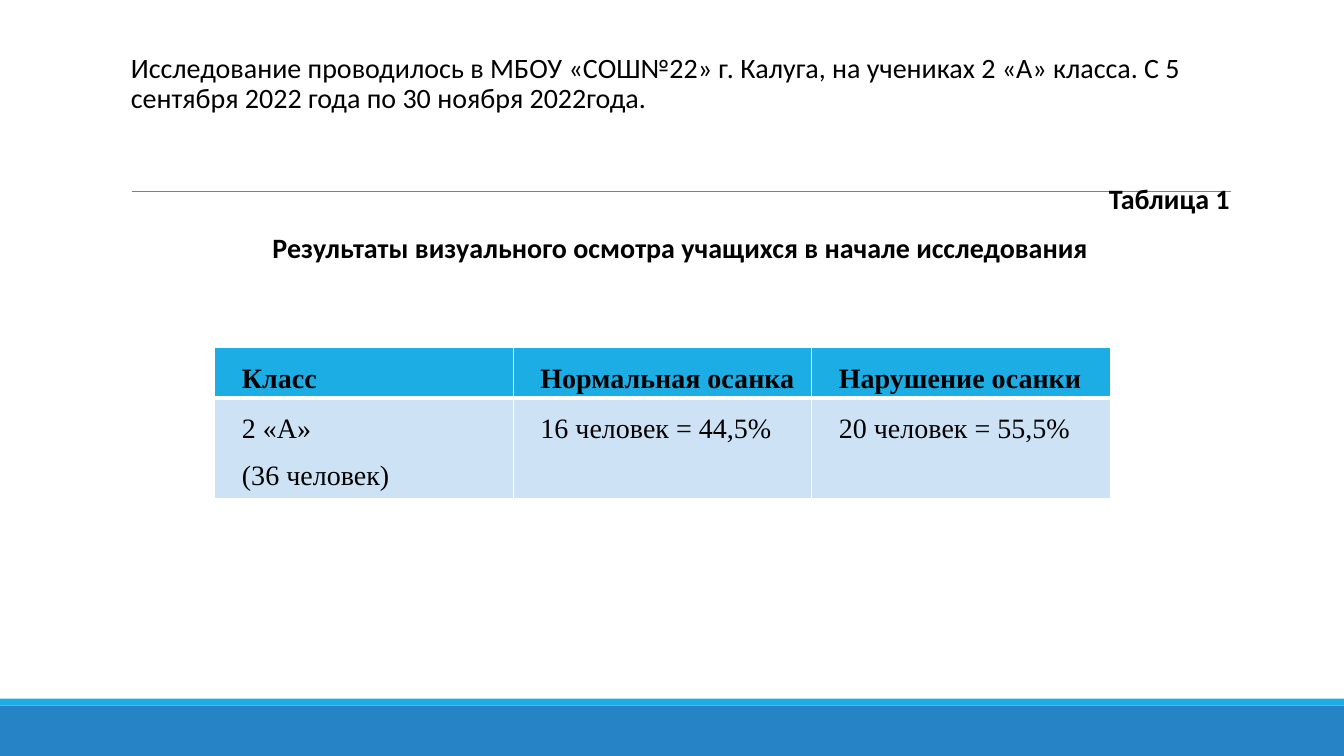
"""Build the slide with the results of the first posture examination."""
from lxml import etree
from pptx import Presentation
from pptx.dml.color import RGBColor
from pptx.enum.shapes import MSO_CONNECTOR, MSO_SHAPE
from pptx.enum.text import PP_ALIGN
from pptx.oxml.ns import qn
from pptx.util import Pt

LEFT, CENTER, RIGHT, JUSTIFY = PP_ALIGN.LEFT, PP_ALIGN.CENTER, PP_ALIGN.RIGHT, PP_ALIGN.JUSTIFY
RECTANGLE, STRAIGHT = MSO_SHAPE.RECTANGLE, MSO_CONNECTOR.STRAIGHT

BLACK = RGBColor(0x00, 0x00, 0x00)
WHITE = RGBColor(0xFF, 0xFF, 0xFF)
GRAY = RGBColor(0x80, 0x80, 0x80)
BLUE = RGBColor(0x26, 0x83, 0xC6)
CYAN = RGBColor(0x1C, 0xAD, 0xE4)
PALE = RGBColor(0xCD, 0xE3, 0xF5)

PARAGRAPHS = [
    ("Исследование проводилось в МБОУ «СОШ№22» г. Калуга, на учениках 2 «А» класса. "
     "С 5 сентября 2022 года по 30 ноября 2022года.", LEFT, False, 12),
    ("Таблица 1", RIGHT, True, 48),
    ("Результаты визуального осмотра учащихся в начале исследования", CENTER, True, 12),
]
RESULTS = [
    ["Класс", "Нормальная осанка", "Нарушение осанки"],
    ["2 «А»\n(36 человек)", "16 человек = 44,5%", "20 человек = 55,5%"],
]
BANDS = [(504, 36, BLUE), (499, 5, CYAN)]

SLIDE_WIDTH, SLIDE_HEIGHT = 960, 540
RULE_LEFT, RULE_RIGHT, RULE_TOP = 94.3, 879.1, 136.8
TEXT_BOX = (86.4, 35.3, 792, 427)
TABLE_LEFT, TABLE_TOP, COLUMN_WIDTH, ROW_HEIGHT = 153.4, 248.4, 213.2, 29.5
TEXT_SIZE = 20


def style_font(paragraph, name, bold):
    for run in paragraph.runs:
        run.font.name = name
        run.font.size = Pt(TEXT_SIZE)
        run.font.bold = bold
        run.font.color.rgb = BLACK


def add_bands(slide):
    for top, height, color in BANDS:
        band = slide.shapes.add_shape(RECTANGLE, 0, Pt(top), Pt(SLIDE_WIDTH), Pt(height))
        band.shadow.inherit = False
        band.fill.solid()
        band.fill.fore_color.rgb = color
        band.line.fill.background()


def add_rule(slide):
    rule = slide.shapes.add_connector(
        STRAIGHT, Pt(RULE_LEFT), Pt(RULE_TOP), Pt(RULE_RIGHT), Pt(RULE_TOP))
    rule.line.color.rgb = GRAY
    rule.line.width = Pt(0.5)
    etree.SubElement(rule.element.spPr, qn("a:effectLst"))


def add_introduction(slide):
    frame = slide.shapes.add_textbox(*map(Pt, TEXT_BOX)).text_frame
    frame.word_wrap = True
    frame.margin_left, frame.margin_right = Pt(7.2), 0
    frame.margin_top = frame.margin_bottom = Pt(3.6)
    frame.text = "\n".join(text for text, *_ in PARAGRAPHS)
    for paragraph, (_, alignment, bold, space_before) in zip(frame.paragraphs, PARAGRAPHS):
        paragraph.alignment = alignment
        paragraph.line_spacing = 0.9
        paragraph.space_before = Pt(space_before)
        paragraph.space_after = Pt(2)
        style_font(paragraph, "Calibri", bold)


def set_borders(cell, bottom_width):
    properties = cell._tc.get_or_add_tcPr()
    widths = {"a:lnL": 1, "a:lnR": 1, "a:lnT": 1, "a:lnB": bottom_width}
    for position, (side, width) in enumerate(widths.items()):
        border = etree.Element(qn(side), w=str(Pt(width)))
        fill = etree.SubElement(border, qn("a:solidFill"))
        etree.SubElement(fill, qn("a:srgbClr"), val=str(WHITE))
        properties.insert(position, border)


def add_results(slide):
    row_count, column_count = len(RESULTS), len(RESULTS[0])
    table = slide.shapes.add_table(
        row_count, column_count, Pt(TABLE_LEFT), Pt(TABLE_TOP),
        Pt(COLUMN_WIDTH * column_count), Pt(ROW_HEIGHT * row_count)).table
    for column in table.columns:
        column.width = Pt(COLUMN_WIDTH)
    for row_index, values in enumerate(RESULTS):
        is_header = row_index == 0
        table.rows[row_index].height = Pt(ROW_HEIGHT)
        for column_index, value in enumerate(values):
            cell = table.cell(row_index, column_index)
            cell.text_frame.text = value
            cell.margin_left = cell.margin_right = Pt(5)
            cell.margin_top = cell.margin_bottom = 0
            cell.fill.solid()
            cell.fill.fore_color.rgb = CYAN if is_header else PALE
            set_borders(cell, 3 if is_header else 1)
            for paragraph in cell.text_frame.paragraphs:
                paragraph.alignment = JUSTIFY
                paragraph.line_spacing = 1.5
                paragraph._p.get_or_add_pPr().set("marL", str(Pt(14.4)))
                style_font(paragraph, "Times New Roman", is_header)


def main():
    presentation = Presentation()
    presentation.slide_width, presentation.slide_height = Pt(SLIDE_WIDTH), Pt(SLIDE_HEIGHT)
    slide = presentation.slides.add_slide(presentation.slide_layouts.get_by_name("Blank"))
    add_bands(slide)
    add_rule(slide)
    add_introduction(slide)
    add_results(slide)
    presentation.save("out.pptx")


if __name__ == "__main__":
    main()
